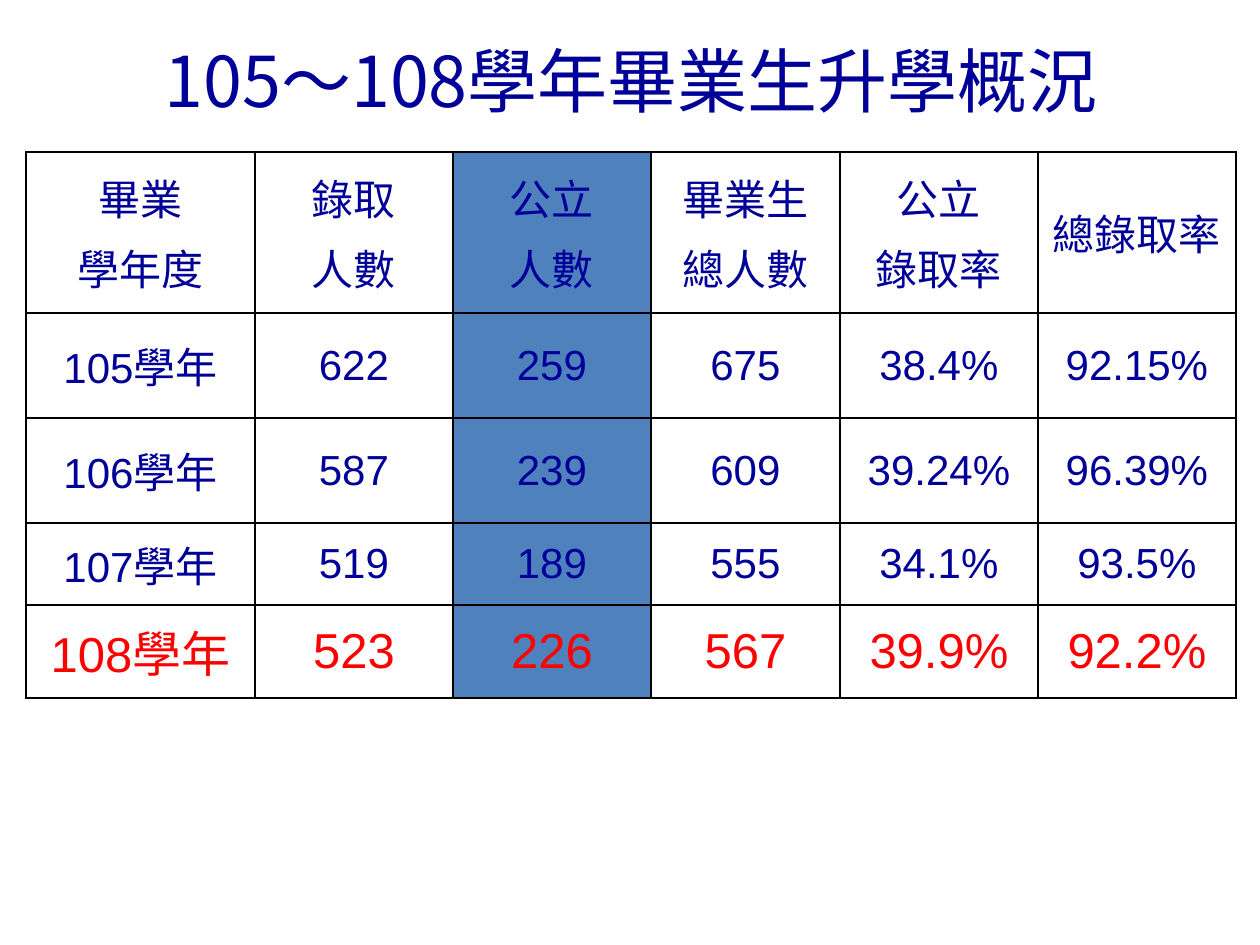
from dataclasses import dataclass

from lxml.etree import SubElement
from pptx import Presentation
from pptx.dml.color import RGBColor
from pptx.enum.text import MSO_ANCHOR as Anchor, PP_ALIGN as Align
from pptx.oxml.ns import qn
from pptx.util import Emu, Pt

PX_PER_INCH = 126
TITLE_ONLY = 5


@dataclass(frozen=True)
class Theme:
    navy: str = "000099"
    red: str = "FF0000"
    blue: str = "4F81BD"
    black: str = "000000"
    latin: str = "Arial"
    cjk: str = "Noto Sans CJK JP"
    title_size: int = 40
    body_size: int = 24
    latest_size: int = 28
    line_gap: int = 5
    border: int = 1


def px(length):
    return Emu(round(length * 914400 / PX_PER_INCH))


class SlideBuilder:
    def __init__(self, slide, theme):
        self.slide = slide
        self.theme = theme

    def style_text(self, text_frame, latin, size, color):
        for number, paragraph in enumerate(text_frame.paragraphs):
            paragraph.alignment = Align.CENTER
            if number:
                paragraph.space_before = Pt(self.theme.line_gap)
            for run in paragraph.runs:
                run.font.size = Pt(size)
                run.font.name = latin
                run.font.color.rgb = RGBColor.from_string(color)
                properties = run.font._element
                SubElement(properties, qn("a:ea"), typeface=self.theme.cjk)

    def add_title(self, text, left, top, width, height):
        title = self.slide.shapes.title
        title.left, title.top = px(left), px(top)
        title.width, title.height = px(width), px(height)
        title.text_frame.text = text
        title.text_frame.vertical_anchor = Anchor.MIDDLE
        self.style_text(title.text_frame, self.theme.cjk,
                        self.theme.title_size, self.theme.navy)

    def add_borders(self, cell):
        properties = cell._tc.get_or_add_tcPr()
        for side in ("lnL", "lnR", "lnT", "lnB"):
            line = SubElement(properties, qn(f"a:{side}"),
                              w=str(Pt(self.theme.border)))
            fill = SubElement(line, qn("a:solidFill"))
            SubElement(fill, qn("a:srgbClr"), val=self.theme.black)

    def add_table(self, rows, left, top, widths, heights, marked_column):
        """Draw a bordered table with one filled column and a red last row."""
        theme = self.theme
        table = self.slide.shapes.add_table(
            len(rows), len(widths), px(left), px(top),
            px(sum(widths)), px(sum(heights))).table
        table.first_row = table.horz_banding = False
        for column, width in zip(table.columns, widths):
            column.width = px(width)
        for row, height in zip(table.rows, heights):
            row.height = px(height)

        for row_number, values in enumerate(rows):
            latest = row_number == len(rows) - 1
            size = theme.latest_size if latest else theme.body_size
            color = theme.red if latest else theme.navy
            for column_number, value in enumerate(values):
                cell = table.cell(row_number, column_number)
                cell.text_frame.text = value
                cell.vertical_anchor = Anchor.MIDDLE
                self.style_text(cell.text_frame, theme.latin, size, color)
                self.add_borders(cell)
                if column_number == marked_column:
                    cell.fill.solid()
                    cell.fill.fore_color.rgb = RGBColor.from_string(theme.blue)
                else:
                    cell.fill.background()


ADMISSIONS = [
    ("畢業\n學年度", "錄取\n人數", "公立\n人數", "畢業生\n總人數", "公立\n錄取率", "總錄取率"),
    ("105學年", "622", "259", "675", "38.4%", "92.15%"),
    ("106學年", "587", "239", "609", "39.24%", "96.39%"),
    ("107學年", "519", "189", "555", "34.1%", "93.5%"),
    ("108學年", "523", "226", "567", "39.9%", "92.2%"),
]


def main():
    presentation = Presentation()
    presentation.slide_width = px(1260)
    presentation.slide_height = px(945)
    slide = presentation.slides.add_slide(
        presentation.slide_layouts[TITLE_ONLY])
    builder = SlideBuilder(slide, Theme())
    builder.add_title("105～108學年畢業生升學概況", 64, 0, 1134, 158)
    builder.add_table(ADMISSIONS, 26, 152,
                      widths=(229, 198, 198, 189, 198, 198),
                      heights=(161, 105, 105, 82, 93),
                      marked_column=2)
    presentation.save("out.pptx")


if __name__ == "__main__":
    main()
